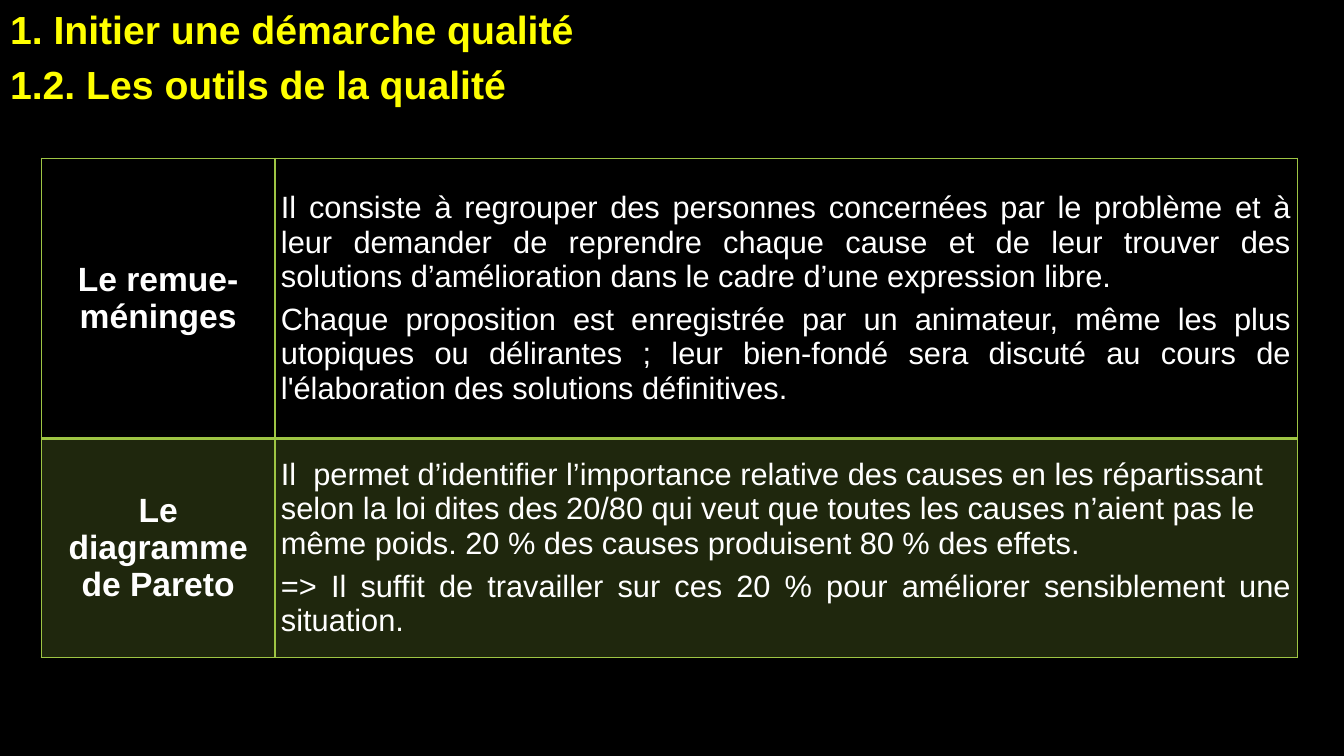
from lxml import etree
from pptx import Presentation
from pptx.dml.color import RGBColor
from pptx.enum.text import MSO_ANCHOR, MSO_AUTO_SIZE, PP_ALIGN
from pptx.oxml.ns import qn
from pptx.util import Cm, Pt

LEFT, CENTER, JUSTIFY = PP_ALIGN.LEFT, PP_ALIGN.CENTER, PP_ALIGN.JUSTIFY
TOP, MIDDLE = MSO_ANCHOR.TOP, MSO_ANCHOR.MIDDLE
NO_AUTOFIT = MSO_AUTO_SIZE.NONE
TITLE_ONLY = 5
FONT = "Arial"
COLORS = {"background": "000000", "title": "FFFF00", "text": "FFFFFF", "green": "9EC544"}

HEADINGS = ["1. Initier une démarche qualité", "1.2. Les outils de la qualité"]
TOOLS = [
    ("Le remue- méninges", [
        ("Il consiste à regrouper des personnes concernées par le problème et à leur "
         "demander de reprendre chaque cause et de leur trouver des solutions "
         "d’amélioration dans le cadre d’une expression libre. ", JUSTIFY),
        ("Chaque proposition est enregistrée par un animateur, même les plus utopiques "
         "ou délirantes ; leur bien-fondé sera discuté au cours de l'élaboration des "
         "solutions définitives.", JUSTIFY),
    ]),
    ("Le diagramme de Pareto", [
        ("Il  permet d’identifier l’importance relative des causes en les répartissant "
         "selon la loi dites des 20/80 qui veut que toutes les causes n’aient pas le "
         "même poids. 20 % des causes produisent 80 % des effets.", LEFT),
        ("=> Il suffit de travailler sur ces 20 % pour améliorer sensiblement une "
         "situation. ", JUSTIFY),
    ]),
]
COLUMN_WIDTHS = [Cm(5.89), Cm(25.76)]
ROW_HEIGHTS = [Cm(7.06), Cm(5.51)]


def rgb(name):
    return RGBColor.from_string(COLORS[name])


def write_paragraphs(frame, entries, size, color, bold, before, after):
    """Fill a text frame with (text, alignment) entries in one common style."""
    for index, (text, alignment) in enumerate(entries):
        paragraph = frame.add_paragraph() if index else frame.paragraphs[0]
        paragraph.text = text
        paragraph.alignment = alignment
        paragraph.space_before, paragraph.space_after = Pt(before), Pt(after)
        font = paragraph.font
        font.name, font.size, font.bold = FONT, Pt(size), bold
        font.color.rgb = rgb(color)


def fill_cell(cell, tinted):
    if not tinted:
        cell.fill.background()
        return
    cell.fill.solid()
    cell.fill.fore_color.rgb = rgb("green")
    tint = cell._tc.tcPr.find(".//" + qn("a:srgbClr"))
    etree.SubElement(tint, qn("a:alpha"), val="20000")


def add_borders(cell, widths):
    """Draw the borders; widths are points for left, right, top, bottom."""
    properties = cell._tc.get_or_add_tcPr()
    for index, (side, width) in enumerate(zip("LRTB", widths)):
        border = etree.Element(qn("a:ln" + side), w=str(Pt(width)))
        line_fill = etree.SubElement(border, qn("a:solidFill"))
        etree.SubElement(line_fill, qn("a:srgbClr"), val=COLORS["green"])
        properties.insert(index, border)


def place_headings(slide, left, top, width, height):
    title = slide.shapes.title
    title.left, title.top, title.width, title.height = left, top, width, height
    frame = title.text_frame
    frame.word_wrap = True
    frame.auto_size = NO_AUTOFIT
    frame.vertical_anchor = TOP
    write_paragraphs(frame, [(text, LEFT) for text in HEADINGS], 28, "title", True, 3, 3)


def add_tools_table(slide, left, top):
    table = slide.shapes.add_table(len(TOOLS), len(COLUMN_WIDTHS), left, top,
                                   sum(COLUMN_WIDTHS), sum(ROW_HEIGHTS)).table
    table.first_row = table.horz_banding = False
    for column, width in zip(table.columns, COLUMN_WIDTHS):
        column.width = width
    for index, (row, height, (tool, description)) in enumerate(
            zip(table.rows, ROW_HEIGHTS, TOOLS)):
        row.height = height
        name_cell, description_cell = row.cells
        write_paragraphs(name_cell.text_frame, [(tool, CENTER)], 24, "text", True, 6, 0)
        write_paragraphs(description_cell.text_frame, description, 22, "text", False, 3, 3)
        for cell in (name_cell, description_cell):
            cell.vertical_anchor = MIDDLE
            cell.margin_left = cell.margin_right = Cm(0.15)
            cell.margin_top = cell.margin_bottom = 0
            fill_cell(cell, tinted=index == 1)
            add_borders(cell, (1, 1, 1, 2) if index == 0 else (1, 1, 2, 1))


def main():
    presentation = Presentation()
    presentation.slide_width, presentation.slide_height = Cm(33.87), Cm(19.05)
    slide = presentation.slides.add_slide(presentation.slide_layouts[TITLE_ONLY])
    slide.background.fill.solid()
    slide.background.fill.fore_color.rgb = rgb("background")
    place_headings(slide, 0, 0, Cm(25.27), Cm(2.77))
    add_tools_table(slide, Cm(1.04), Cm(3.99))
    presentation.save("out.pptx")


if __name__ == "__main__":
    main()
